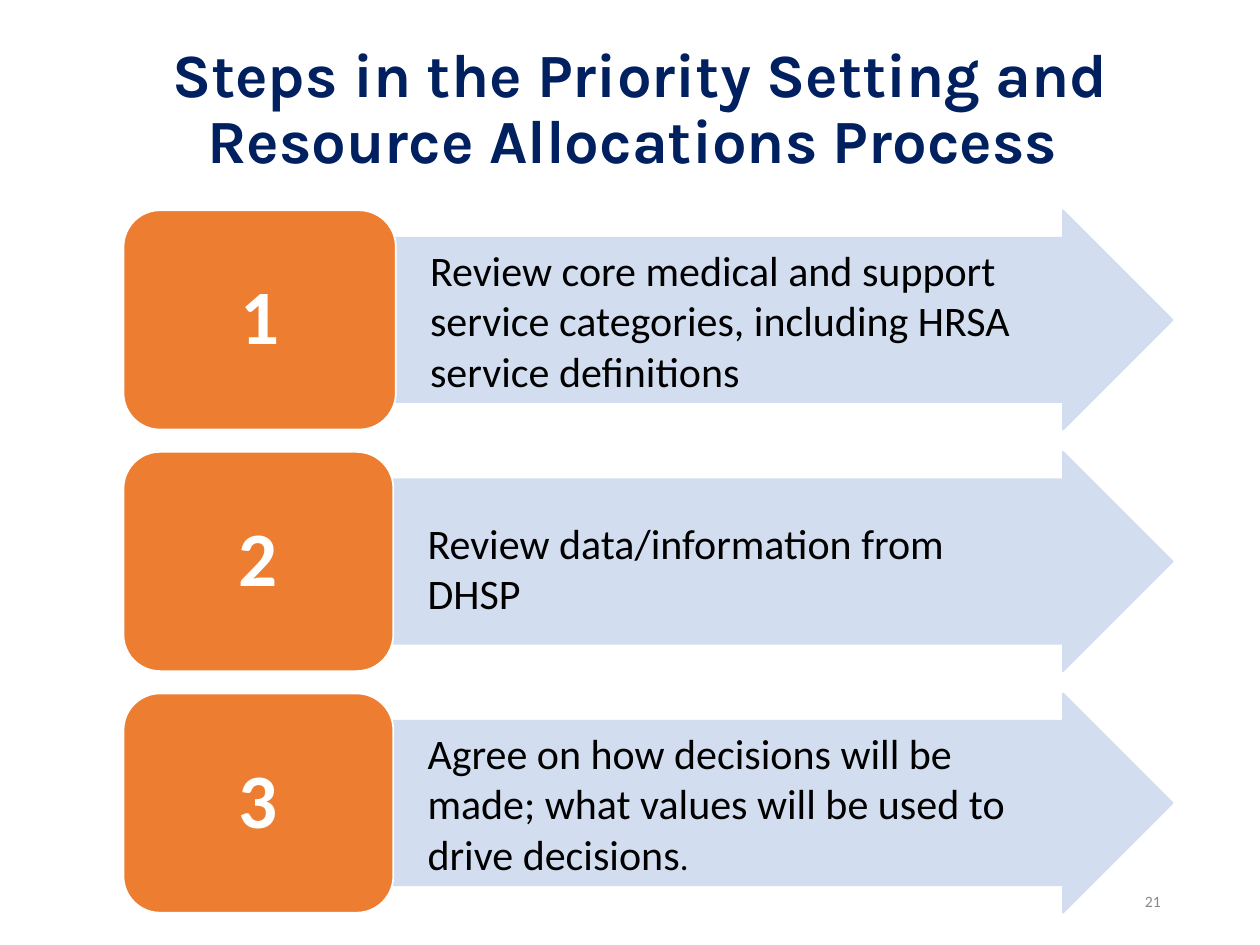
import pptx
import pptx.util
import pptx.dml.color
import pptx.enum.shapes
import pptx.enum.text
import pptx.oxml.ns
from lxml import etree
from pptx.util import Cm, Pt

ALIGN = pptx.enum.text.PP_ALIGN
SHAPE = pptx.enum.shapes.MSO_SHAPE
NUMBER = dict(name="Calibri", size=Pt(44), bold=True)
BODY = dict(name="Calibri", size=Pt(24))
ARROW_COLOR = "D2DEEF"
STEPS = [
    ("1", [("Review core medical and support service categories, "
            "including HRSA service definitions", 24)], 5.49, 0.05),
    ("2", [("Review data/information from DHSP", 24)], 5.44, 0.3),
    ("3", [("Agree on how decisions will be made; what values will be "
            "used to drive decisions", 24), (".", 20)], 5.44, 0.05),
]


def rgb(value):
    return pptx.dml.color.RGBColor.from_string(value)


def set_opacity(color_format, percent):
    for clr in color_format._xFill.iter(pptx.oxml.ns.qn("a:srgbClr")):
        alpha = etree.SubElement(clr, pptx.oxml.ns.qn("a:alpha"))
        alpha.set("val", str(percent * 1000))


def format_frame(sp, left, top, right, bottom):
    tf = sp.text_frame
    values = dict(word_wrap=True, margin_left=Cm(left), margin_top=Cm(top),
                  margin_right=Cm(right), margin_bottom=Cm(bottom),
                  vertical_anchor=pptx.enum.text.MSO_ANCHOR.MIDDLE)
    for key, value in values.items():
        setattr(tf, key, value)
    return tf.paragraphs[0]


def add_run(p, text, color, font):
    r = p.add_run()
    r.text = text
    r.font.color.rgb = rgb(color)
    for key, value in font.items():
        setattr(r.font, key, value)


def add_block(s, kind, box, fill, line):
    sp = s.shapes.add_shape(kind, *map(Cm, box))
    sp.shadow.inherit = False
    sp.fill.solid()
    sp.fill.fore_color.rgb = rgb(fill)
    sp.line.color.rgb = rgb(line)
    sp.line.width = Pt(1)
    return sp


def add_label(s, box, text, color, font, align, spacing):
    sp = s.shapes.add_textbox(*map(Cm, box))
    p = format_frame(sp, 0.25, 0.13, 0.25, 0.13)
    p.alignment = align
    p.line_spacing = spacing
    add_run(p, text, color, font)


def add_step(s, box, number, parts, marker_width, text_top):
    left, top, width, height = box
    arrow = add_block(s, SHAPE.RIGHT_ARROW,
                      (left + marker_width, top, width - marker_width, height),
                      ARROW_COLOR, ARROW_COLOR)
    arrow.adjustments[0] = 0.75
    for fill in (arrow.fill, arrow.line.fill):
        set_opacity(fill._fill, 90) if hasattr(fill._fill, "_xFill") else None
    p = format_frame(arrow, 0.69, text_top, 1.14, 0.05)
    p.alignment = ALIGN.LEFT
    for text, size in parts:
        add_run(p, text, "000000", {**BODY, "size": Pt(size)})

    marker = add_block(s, SHAPE.ROUNDED_RECTANGLE,
                       (left, top, marker_width, height), "ED7D31", "FFFFFF")
    p = format_frame(marker, 0.46, 0.23, 0.46, 0.23)
    p.alignment = ALIGN.CENTER
    p.line_spacing = 0.9
    add_run(p, number, "FFFFFF", NUMBER)


def add_steps(s, box, gap):
    left, top, width, height = box
    row = (height - gap * (len(STEPS) - 1)) / len(STEPS)
    for i, step in enumerate(STEPS):
        add_step(s, (left, top + i * (row + gap), width, row), *step)


def main():
    prs = pptx.Presentation()
    prs.slide_width, prs.slide_height = Cm(25.4), Cm(19.05)
    s = prs.slides.add_slide(prs.slide_layouts[6])
    add_label(s, (17.93, 17.65, 5.72, 1.02), "21", "898989",
              dict(name="Calibri", size=Pt(9)), ALIGN.RIGHT, 1.0)
    add_label(s, (1.47, 0.66, 22.86, 3.15),
              "Steps in the Priority Setting and Resource Allocations Process ",
              "002060", dict(name="Karla", size=Pt(35.1), bold=True),
              ALIGN.CENTER, 0.9)
    add_steps(s, (2.49, 4.24, 21.15, 14.16), 0.45)
    prs.save("out.pptx")


if __name__ == "__main__":
    main()
